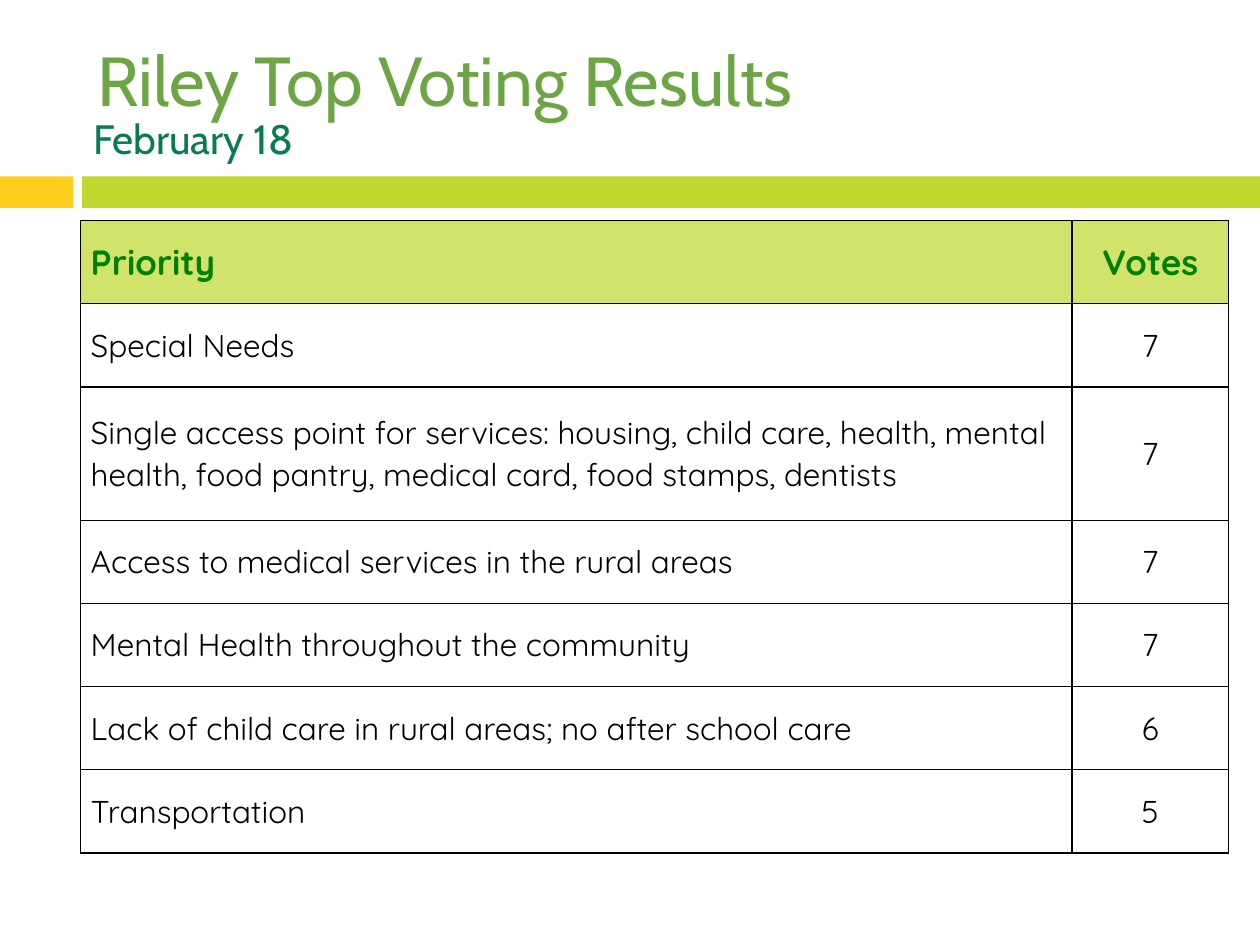
from lxml import etree
from pptx import Presentation
from pptx import util as u
from pptx.dml.color import RGBColor
from pptx.enum import shapes, text
from pptx.oxml.ns import qn

COLORS = {
    "title": "6CA644", "date": "087B54", "yellow": "FFCF1D", "lime": "C0D730",
    "head": "D2E36B", "green": "008000", "black": "000000", "white": "FFFFFF",
}
ROWS = [
    ("Priority", "Votes"),
    ("Special Needs", "7"),
    ("Single access point for services: housing, child care, health, mental "
     "health, food pantry, medical card, food stamps, dentists", "7"),
    ("Access to medical services in the rural areas", "7"),
    ("Mental Health throughout the community", "7"),
    ("Lack of child care in rural areas; no after school care", "6"),
    ("Transportation", "5"),
]
WIDTHS = (7.87, 1.24)
ROW_H, TALL_H = 0.66, 1.06
TALL_ROW = 2


def rgb(name):
    return RGBColor.from_string(COLORS[name])


def style(par, font, size, color, bold=False):
    for run in par.runs:
        run.font.name = font
        run.font.size = u.Pt(size)
        run.font.bold = bold
        run.font.color.rgb = rgb(color)


def add_bar(slide, left, width, color):
    bar = slide.shapes.add_shape(
        shapes.MSO_SHAPE.RECTANGLE,
        u.Inches(left), u.Inches(1.4), u.Inches(width), u.Inches(0.25))
    bar.shadow.inherit = False
    bar.fill.solid()
    bar.fill.fore_color.rgb = rgb(color)
    bar.line.fill.background()


def set_head(shape, words, size, color):
    """Fill a heading box with one left-aligned line."""
    frame = shape.text_frame
    frame.text = words
    frame.word_wrap = True
    frame.auto_size = text.MSO_AUTO_SIZE.NONE
    frame.vertical_anchor = text.MSO_ANCHOR.MIDDLE
    par = frame.paragraphs[0]
    par.alignment = text.PP_ALIGN.LEFT
    style(par, "Cabin", size, color)


def add_title(slide, words):
    title = slide.shapes.title
    title.left, title.top = u.Inches(0.67), u.Inches(0.25)
    title.width, title.height = u.Inches(8.92), u.Inches(0.75)
    set_head(title, words, 39.6, "title")


def add_date(slide, words):
    box = slide.shapes.add_textbox(
        u.Inches(0.64), u.Inches(0.83), u.Inches(8.92), u.Inches(0.54))
    set_head(box, words, 23.4, "date")


def add_edges(cell):
    """Draw a thin black line on all four sides; call before the fill."""
    props = cell._tc.get_or_add_tcPr()
    for side in ("a:lnL", "a:lnR", "a:lnT", "a:lnB"):
        line = etree.SubElement(props, qn(side), w=str(u.Pt(1)))
        fill = etree.SubElement(line, qn("a:solidFill"))
        etree.SubElement(fill, qn("a:srgbClr"), val=COLORS["black"])


def set_cell(cell, words, head, center):
    cell.text = words
    cell.vertical_anchor = text.MSO_ANCHOR.MIDDLE
    cell.margin_left = cell.margin_right = u.Inches(0.08)
    cell.margin_top, cell.margin_bottom = 0, u.Inches(0.02)
    add_edges(cell)
    cell.fill.solid()
    cell.fill.fore_color.rgb = rgb("head" if head else "white")
    par = cell.text_frame.paragraphs[0]
    par.line_spacing = 1.07
    par.alignment = text.PP_ALIGN.CENTER if center else text.PP_ALIGN.LEFT
    if head:
        style(par, "Quicksand", 20, "green", True)
    else:
        style(par, "Quicksand", 18, "black")


def add_votes(slide):
    heights = [TALL_H if i == TALL_ROW else ROW_H for i in range(len(ROWS))]
    table = slide.shapes.add_table(
        len(ROWS), len(WIDTHS), u.Inches(0.64), u.Inches(1.75),
        u.Inches(sum(WIDTHS)), u.Inches(sum(heights))).table
    for col, width in zip(table.columns, WIDTHS):
        col.width = u.Inches(width)
    for r, (height, row) in enumerate(zip(heights, ROWS)):
        table.rows[r].height = u.Inches(height)
        for c, words in enumerate(row):
            set_cell(table.cell(r, c), words, r == 0, c == 1)


def main():
    deck = Presentation()
    deck.slide_width, deck.slide_height = u.Inches(10), u.Inches(7.5)
    slide = deck.slides.add_slide(deck.slide_layouts[5])
    add_bar(slide, 0, 0.58, "yellow")
    add_bar(slide, 0.65, 9.35, "lime")
    add_title(slide, "Riley Top Voting Results")
    add_date(slide, "February 18")
    add_votes(slide)
    deck.save("out.pptx")


if __name__ == "__main__":
    main()
